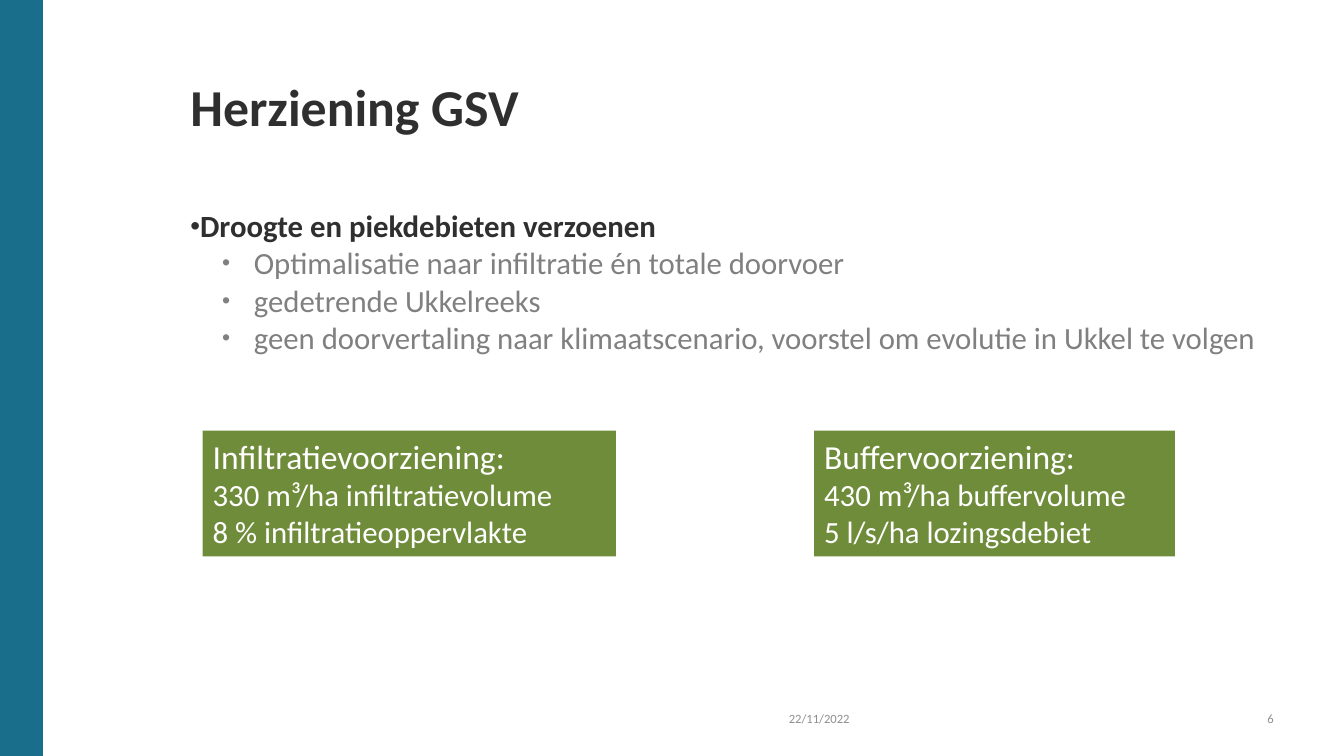
from dataclasses import dataclass
from typing import Optional

from lxml.etree import SubElement
from pptx import Presentation
from pptx.dml.color import RGBColor
from pptx.enum.shapes import MSO_SHAPE as Preset
from pptx.enum.text import MSO_ANCHOR as Anchor, MSO_AUTO_SIZE as AutoSize, PP_ALIGN as Align
from pptx.oxml.ns import qn
from pptx.shapes.autoshape import Shape
from pptx.slide import Slide
from pptx.util import Cm, Pt

FONT = "Calibri"
TEAL, GREEN, WHITE = "196E8B", "6F8C3A", "FFFFFF"
DARK, GREY, FOOTER_GREY = "2F2F2F", "808080", "8F8F8F"


@dataclass(frozen=True)
class Area:
    left: float
    top: float
    width: float
    height: float


@dataclass(frozen=True)
class Bullet:
    size: int
    margin: float = 0
    hanging: float = 0
    level: int = 0


@dataclass(frozen=True)
class Line:
    text: str
    size: float
    color: str
    bold: bool = False
    align: Align = Align.LEFT
    spacing: Optional[float] = None
    before: float = 0
    bullet: Optional[Bullet] = None


@dataclass(frozen=True)
class Provision:
    left: float
    width: float
    heading: str
    figures: tuple[str, ...]


def rgb(color: str) -> RGBColor:
    return RGBColor.from_string(color)


def add_bullet(paragraph, bullet: Bullet) -> None:
    properties = paragraph._p.get_or_add_pPr()
    properties.set("marL", str(Cm(bullet.margin)))
    properties.set("indent", str(-Cm(bullet.hanging)))
    SubElement(properties, qn("a:buSzPct"), val=str(bullet.size * 1000))
    SubElement(properties, qn("a:buFont"), typeface="Arial")
    SubElement(properties, qn("a:buChar"), char="•")
    paragraph.level = bullet.level


def write(shape: Shape, lines: list[Line], anchor: Anchor = Anchor.TOP,
          inset: bool = True) -> None:
    frame = shape.text_frame
    frame.word_wrap = True
    frame.vertical_anchor = anchor
    if not inset:
        frame.margin_left = frame.margin_right = 0
        frame.margin_top = frame.margin_bottom = 0
    for index, line in enumerate(lines):
        paragraph = frame.add_paragraph() if index else frame.paragraphs[0]
        if line.bullet:
            add_bullet(paragraph, line.bullet)
        paragraph.alignment = line.align
        if line.spacing:
            paragraph.line_spacing = line.spacing
        if line.before:
            paragraph.space_before = Pt(line.before)
        run = paragraph.add_run()
        run.text = line.text
        run.font.name = FONT
        run.font.size = Pt(line.size)
        run.font.bold = line.bold
        run.font.color.rgb = rgb(line.color)


def add_text(slide: Slide, area: Area, lines: list[Line],
             anchor: Anchor = Anchor.TOP, inset: bool = True) -> None:
    box = slide.shapes.add_textbox(Cm(area.left), Cm(area.top), Cm(area.width), Cm(area.height))
    write(box, lines, anchor, inset)


def add_block(slide: Slide, area: Area, fill: str, outlined: bool = False) -> Shape:
    block = slide.shapes.add_shape(Preset.RECTANGLE, Cm(area.left), Cm(area.top),
                                   Cm(area.width), Cm(area.height))
    block.shadow.inherit = False
    block.fill.solid()
    block.fill.fore_color.rgb = rgb(fill)
    if outlined:
        block.line.color.rgb = rgb(fill)
        block.line.width = Pt(1)
    else:
        block.line.fill.background()
    return block


def add_provision(slide: Slide, provision: Provision) -> None:
    block = add_block(slide, Area(provision.left, 10.85, provision.width, 3.17), GREEN)
    figures = [Line(figure, 22, WHITE) for figure in provision.figures]
    write(block, [Line(provision.heading, 24, WHITE), *figures])
    block.text_frame.auto_size = AutoSize.SHAPE_TO_FIT_TEXT


PROVISIONS = (
    Provision(5.11, 10.41, "Infiltratievoorziening:",
              ("330 m³/ha infiltratievolume", "8 % infiltratieoppervlakte")),
    Provision(20.52, 9.09, "Buffervoorziening:",
              ("430 m³/ha buffervolume", "5 l/s/ha lozingsdebiet")),
)
MEASURES = (
    "Optimalisatie naar infiltratie én totale doorvoer",
    "gedetrende Ukkelreeks",
    "geen doorvertaling naar klimaatscenario, voorstel om evolutie in Ukkel te volgen",
)


def main() -> None:
    deck = Presentation()
    deck.slide_width, deck.slide_height = Cm(33.87), Cm(19.05)
    slide = deck.slides.add_slide(deck.slide_layouts[6])

    add_block(slide, Area(0, 0, 1.07, 19.05), TEAL, outlined=True)
    add_text(slide, Area(4.8, 2.11, 27.46, 3.1),
             [Line("Herziening GSV", 37, DARK, bold=True, spacing=Pt(38))], inset=False)

    theme = Line("Droogte en piekdebieten verzoenen", 22, DARK, bold=True,
                 spacing=0.9, bullet=Bullet(90))
    measure_bullet = Bullet(75, margin=1.6, hanging=0.8, level=1)
    measures = [Line(measure, 22, GREY, spacing=0.9, before=3, bullet=measure_bullet)
                for measure in MEASURES]
    add_text(slide, Area(4.8, 5.31, 28.17, 10.21), [theme, *measures], inset=False)

    add_text(slide, Area(19.63, 17.6, 3.33, 1),
             [Line("22/11/2022", 9, FOOTER_GREY)], Anchor.MIDDLE)
    add_text(slide, Area(30.35, 17.6, 2, 1),
             [Line("6", 9, FOOTER_GREY, align=Align.RIGHT)], Anchor.MIDDLE)

    for provision in PROVISIONS:
        add_provision(slide, provision)

    deck.save("out.pptx")


if __name__ == "__main__":
    main()
